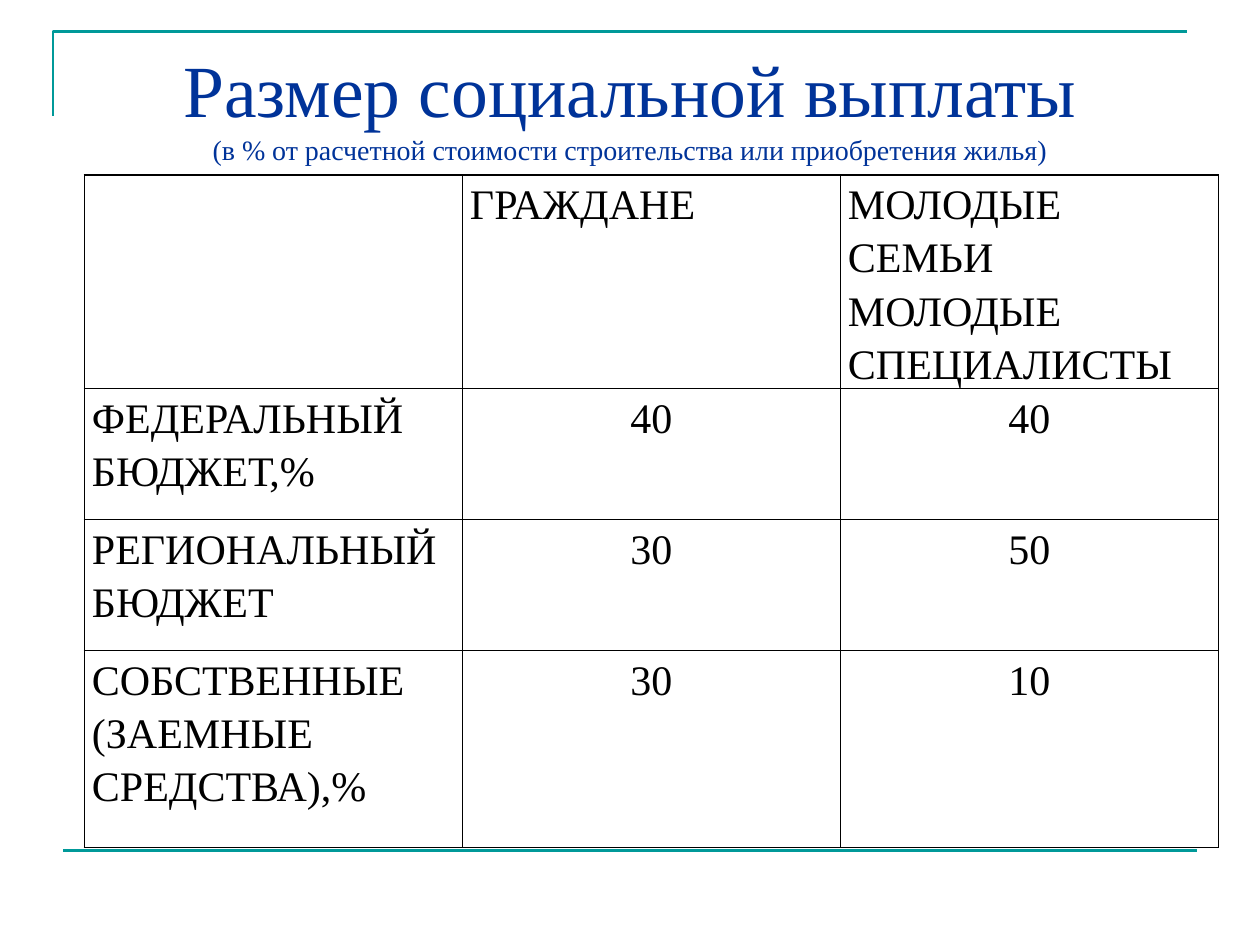
import pptx
import pptx.dml.color
import pptx.enum.shapes
import pptx.enum.text
import pptx.util
from lxml import etree
from pptx.oxml.ns import qn

Inches = pptx.util.Inches
Pt = pptx.util.Pt
Align = pptx.enum.text.PP_ALIGN
TEAL = pptx.dml.color.RGBColor(0x00, 0x99, 0x99)
NAVY = pptx.dml.color.RGBColor(0x00, 0x33, 0x99)
BLACK = pptx.dml.color.RGBColor(0x00, 0x00, 0x00)

HEADING = "Размер социальной выплаты"
SUBHEADING = "(в % от расчетной стоимости строительства или приобретения жилья)"
PAYMENTS = [
    ["", "ГРАЖДАНЕ", "МОЛОДЫЕ СЕМЬИ МОЛОДЫЕ СПЕЦИАЛИСТЫ"],
    ["ФЕДЕРАЛЬНЫЙ БЮДЖЕТ,%", "40", "40"],
    ["РЕГИОНАЛЬНЫЙ БЮДЖЕТ", "30", "50"],
    ["СОБСТВЕННЫЕ (ЗАЕМНЫЕ СРЕДСТВА),%", "30", "10"],
]
ROW_HEIGHTS = [1.31, 1.04, 1.04, 1.56]
COLUMN_WIDTH = 3


class SlideBuilder:
    font_name = "Times New Roman"
    accent_width = Pt(1.5)
    border_width = Pt(1)

    def __init__(self, slide):
        self.slide = slide

    def style_font(self, font, color):
        font.name = self.font_name
        font.color.rgb = color

    def style_accent(self, line):
        line.color.rgb = TEAL
        line.width = self.accent_width

    def title(self, left, top, width, height, lines):
        """Fill the title with (text, size) lines in one paragraph."""
        title = self.slide.shapes.title
        title.left, title.top = Inches(left), Inches(top)
        title.width, title.height = Inches(width), Inches(height)
        frame = title.text_frame
        frame.word_wrap = True
        frame.auto_size = pptx.enum.text.MSO_AUTO_SIZE.NONE
        frame.vertical_anchor = pptx.enum.text.MSO_ANCHOR.TOP
        paragraph = frame.paragraphs[0]
        paragraph.alignment = Align.CENTER
        self.style_font(paragraph.font, NAVY)
        for index, (text, size) in enumerate(lines):
            if index:
                paragraph.add_line_break()
            run = paragraph.add_run()
            run.text = text
            run.font.size = Pt(size)

    def corner(self, points):
        start, *rest = [(Inches(x), Inches(y)) for x, y in points]
        builder = self.slide.shapes.build_freeform(*start)
        builder.add_line_segments(rest, close=False)
        corner = builder.convert_to_shape()
        corner.fill.background()
        corner.shadow.inherit = False
        self.style_accent(corner.line)

    def rule(self, start, end):
        rule = self.slide.shapes.add_connector(
            pptx.enum.shapes.MSO_CONNECTOR.STRAIGHT,
            *[Inches(value) for value in (*start, *end)])
        self.style_accent(rule.line)
        etree.SubElement(rule._element.spPr, qn("a:effectLst"))

    def table(self, left, top, rows, heights, column_width):
        columns = len(rows[0])
        table = self.slide.shapes.add_table(
            len(rows), columns, Inches(left), Inches(top),
            Inches(column_width * columns), Inches(sum(heights))).table
        table.first_row = table.horz_banding = False
        for column in table.columns:
            column.width = Inches(column_width)
        for r, (texts, height) in enumerate(zip(rows, heights)):
            table.rows[r].height = Inches(height)
            for c, text in enumerate(texts):
                centered = r > 0 and c > 0
                self.cell(table.cell(r, c), text, centered)

    def cell(self, cell, text, centered):
        self.borders(cell)
        cell.fill.background()
        cell.margin_left = cell.margin_right = Inches(0.06)
        cell.margin_top = cell.margin_bottom = 0
        cell.text = text
        paragraph = cell.text_frame.paragraphs[0]
        paragraph.alignment = Align.CENTER if centered else Align.LEFT
        paragraph.line_spacing = 1.15
        paragraph.font.size = Pt(24)
        self.style_font(paragraph.font, BLACK)

    def borders(self, cell):
        properties = cell._tc.get_or_add_tcPr()
        for side in ("lnL", "lnR", "lnT", "lnB"):
            border = etree.SubElement(
                properties, qn(f"a:{side}"), w=str(int(self.border_width)))
            fill = etree.SubElement(border, qn("a:solidFill"))
            etree.SubElement(fill, qn("a:srgbClr"), val=str(BLACK))


def main():
    presentation = pptx.Presentation()
    presentation.slide_width = Inches(10)
    presentation.slide_height = Inches(7.5)
    title_only = presentation.slide_layouts[5]
    builder = SlideBuilder(presentation.slides.add_slide(title_only))

    # Accent lines
    builder.corner([(0.42, 0.92), (0.42, 0.25), (9.42, 0.25)])
    builder.rule((0.5, 6.75), (9.5, 6.75))

    # Heading and payment shares
    builder.title(0.5, 0.3, 9, 1.25, [(HEADING, 42), (SUBHEADING, 16)])
    builder.table(0.67, 1.39, PAYMENTS, ROW_HEIGHTS, COLUMN_WIDTH)

    presentation.save("out.pptx")


if __name__ == "__main__":
    main()
